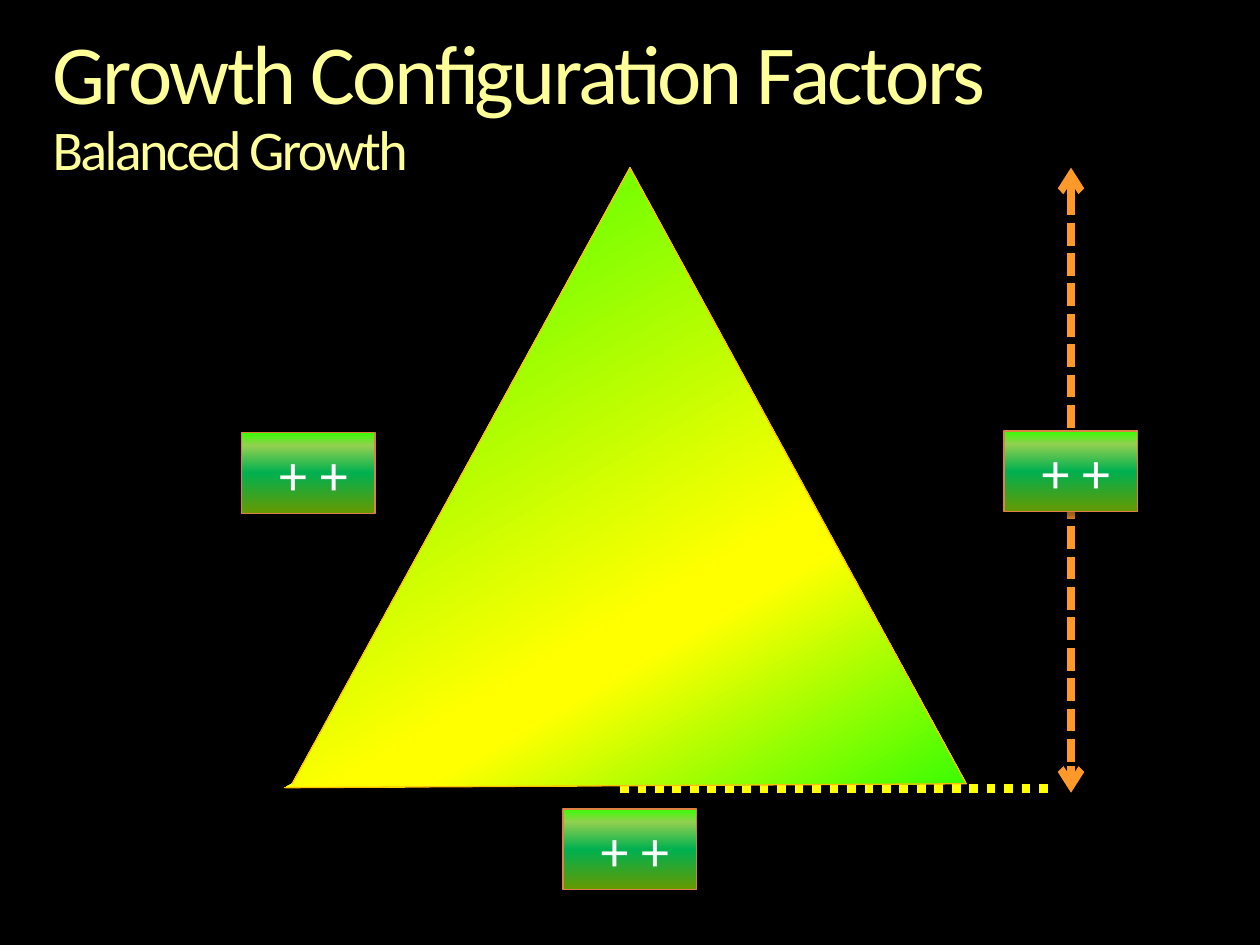
from pptx import Presentation
from pptx.dml.color import RGBColor
from pptx.enum.dml import MSO_LINE
from pptx.enum.shapes import MSO_CONNECTOR, MSO_SHAPE
from pptx.enum.text import MSO_ANCHOR, PP_ALIGN
from pptx.oxml import parse_xml
from pptx.oxml.ns import nsdecls, qn
from pptx.util import Cm, Pt

STRAIGHT = MSO_CONNECTOR.STRAIGHT
RECTANGLE = MSO_SHAPE.RECTANGLE
DOTTED, DASHED = MSO_LINE.ROUND_DOT, MSO_LINE.SQUARE_DOT
LEFT, MIDDLE = PP_ALIGN.LEFT, MSO_ANCHOR.MIDDLE

FONT = "Calibri"
BLACK = RGBColor(0x00, 0x00, 0x00)
WHITE = RGBColor(0xFF, 0xFF, 0xFF)
TITLE_YELLOW = RGBColor(0xFF, 0xFF, 0x99)
YELLOW = RGBColor(0xFF, 0xFF, 0x00)
ORANGE = RGBColor(0xFF, 0x99, 0x29)
RUST = RGBColor(0xDF, 0x80, 0x45)
AMBER = RGBColor(0xFF, 0xC0, 0x00)
LIME = RGBColor(0x39, 0xFD, 0x03)
OLIVE = RGBColor(0x66, 0x99, 0x00)
GREEN = RGBColor(0x00, 0xB0, 0x50)
LIGHT_GREEN = RGBColor(0x92, 0xD0, 0x50)

BADGE_STOPS = [(0, OLIVE), (50, GREEN), (84, LIGHT_GREEN), (100, LIME)]
TRIANGLE_STOPS = [(0, LIME), (64, YELLOW), (69, YELLOW), (100, LIME)]
BADGE_WIDTH, BADGE_HEIGHT = 2.69, 1.63


def add_shadow(shape, opacity):
    shape._element.spPr.append(parse_xml(
        f'<a:effectLst {nsdecls("a")}>'
        '<a:outerShdw blurRad="50800" dist="38100" dir="5400000" rotWithShape="0">'
        f'<a:srgbClr val="{BLACK}"><a:alpha val="{opacity * 1000}"/></a:srgbClr>'
        '</a:outerShdw></a:effectLst>'))


def fill_gradient(shape, stops, angle):
    shape.fill.gradient()
    shape.fill.gradient_angle = angle
    stop_list = shape._element.spPr.find(qn("a:gradFill")).find(qn("a:gsLst"))
    for stop in list(stop_list):
        stop_list.remove(stop)
    for position, color in stops:
        stop_list.append(parse_xml(
            f'<a:gs {nsdecls("a")} pos="{position * 1000}">'
            f'<a:srgbClr val="{color}"/></a:gs>'))


def set_line(shape, color, width):
    shape.line.color.rgb = color
    shape.line.width = Pt(width)


def format_span(span, size, color):
    span.font.name = FONT
    span.font.size = Pt(size)
    span.font.color.rgb = color


def add_title(page, title, subtitle):
    box = page.shapes.add_textbox(Cm(1.06), Cm(0.64), Cm(23.28), Cm(3.07))
    frame = box.text_frame
    frame.word_wrap = True
    frame.margin_left = frame.margin_right = 0
    frame.margin_top = frame.margin_bottom = 0
    para = frame.paragraphs[0]
    para.text = f"{title}\v{subtitle}"
    para.line_spacing = 0.9
    for span, size in zip(para.runs, (48, 32)):
        format_span(span, size, TITLE_YELLOW)
        span.font._element.set("spc", "-150")


def add_guide(page, start, end, color, width, dash, arrows=False):
    guide = page.shapes.add_connector(
        STRAIGHT, *(Cm(value) for value in (*start, *end)))
    set_line(guide, color, width)
    guide.line.dash_style = dash
    if arrows:
        for tag in ("headEnd", "tailEnd"):
            guide.line._get_or_add_ln().append(
                parse_xml(f'<a:{tag} {nsdecls("a")} type="arrow"/>'))
    add_shadow(guide, 35)


def add_triangle(page):
    corners = [(5.89, 15.8), (12.7, 3.38), (19.48, 15.8), (5.74, 15.88)]
    points = [(Cm(x), Cm(y)) for x, y in corners]
    builder = page.shapes.build_freeform(*points[0])
    builder.add_line_segments(points[1:], close=False)
    triangle = builder.convert_to_shape()
    triangle.shadow.inherit = False
    fill_gradient(triangle, TRIANGLE_STOPS, 300)
    set_line(triangle, AMBER, 0.75)


def add_badge(page, left, top):
    badge = page.shapes.add_shape(
        RECTANGLE, Cm(left), Cm(top), Cm(BADGE_WIDTH), Cm(BADGE_HEIGHT))
    fill_gradient(badge, BADGE_STOPS, 90)
    set_line(badge, RUST, 0.75)
    add_shadow(badge, 40)
    frame = badge.text_frame
    frame.word_wrap = True
    frame.vertical_anchor = MIDDLE
    frame.margin_left = Cm(0.76)
    frame.text = "+ +"
    para = frame.paragraphs[0]
    para.alignment = LEFT
    format_span(para.runs[0], 32, WHITE)


def main():
    deck = Presentation()
    deck.slide_width, deck.slide_height = Cm(25.4), Cm(19.05)
    page = deck.slides.add_slide(deck.slide_layouts[6])
    page.background.fill.solid()
    page.background.fill.fore_color.rgb = BLACK

    add_title(page, "Growth Configuration Factors", "Balanced Growth")
    add_guide(page, (12.5, 15.9), (21.16, 15.9), YELLOW, 5, DOTTED)
    add_guide(page, (21.59, 3.38), (21.59, 15.98), ORANGE, 4.33, DASHED, arrows=True)
    add_badge(page, 20.24, 8.69)
    add_triangle(page)
    add_badge(page, 11.35, 16.31)
    add_badge(page, 4.87, 8.72)
    deck.save("out.pptx")


if __name__ == "__main__":
    main()
